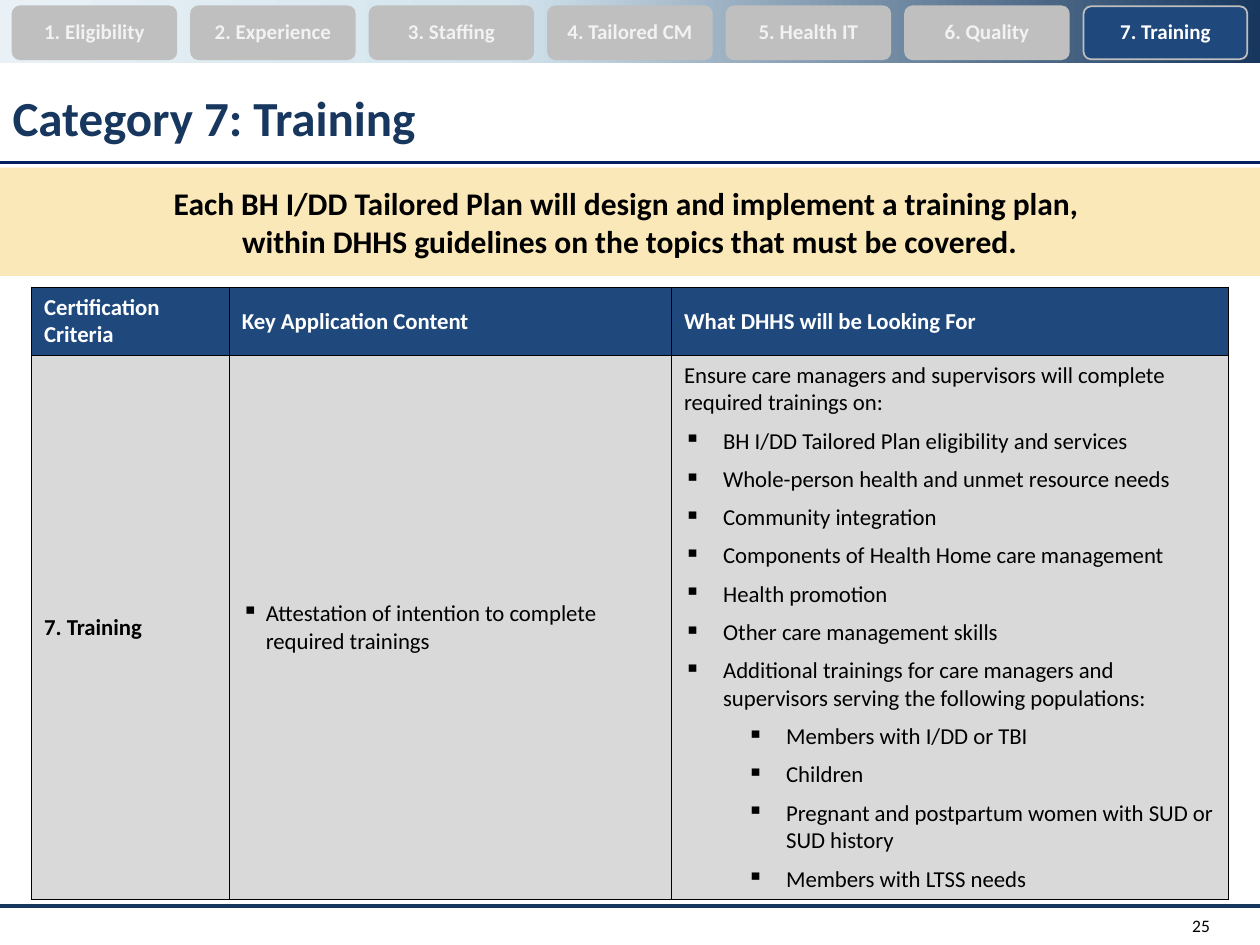
"""Build the training category slide with its tab bar, banner and criteria table."""
from copy import deepcopy
from lxml import etree
from pptx import Presentation
from pptx.dml.color import RGBColor
from pptx.enum import shapes, text
from pptx.oxml.ns import qn
from pptx.util import Inches, Pt


def rgb(code):
    return RGBColor.from_string(code)


def style(para, size, color, bold=False):
    for run in para.runs:
        run.font.name = "Calibri"
        run.font.size = Pt(size)
        run.font.bold = bold
        run.font.color.rgb = rgb(color)


deck = Presentation()
deck.slide_width = Inches(10)
deck.slide_height = Inches(7.5)
slide = deck.slides.add_slide(deck.slide_layouts[5])
items = slide.shapes

bar = items.add_shape(shapes.MSO_SHAPE.RECTANGLE, 0, 0, Inches(10), Inches(0.5))
bar.shadow.inherit = False
bar.line.fill.background()
bar.fill.gradient()
bar.fill.gradient_angle = 180
first = bar.fill._fill._gradFill.gsLst[0]
first.addnext(deepcopy(first))
stops = [(0, "17375E"), (0.6, "D3E4ED"), (1, "E9F1F6")]
for stop, (place, color) in zip(bar.fill.gradient_stops, stops):
    stop.position = place
    stop.color.rgb = rgb(color)

for top, color, width in [(7.19, "17375E", 2.25), (1.29, "002060", 2)]:
    rule = items.add_connector(shapes.MSO_CONNECTOR.STRAIGHT, 0, Inches(top), Inches(10), Inches(top))
    rule.line.color.rgb = rgb(color)
    rule.line.width = Pt(width)
    etree.SubElement(rule._element.spPr, qn("a:effectLst"))

title = items.title
title.left, title.top, title.width, title.height = [Inches(n) for n in (0, 0.67, 9.7, 0.58)]
title.text_frame.text = "Category 7: Training"
title.text_frame.vertical_anchor = text.MSO_ANCHOR.MIDDLE
head = title.text_frame.paragraphs[0]
head.alignment = text.PP_ALIGN.LEFT
head.line_spacing = 0.9
style(head, 28, "17375E", True)

page = items.add_textbox(Inches(9.08), Inches(7.19), Inches(0.62), Inches(0.31)).text_frame
page.word_wrap = True
page.vertical_anchor = text.MSO_ANCHOR.MIDDLE
page.text = "25"
page.paragraphs[0].alignment = text.PP_ALIGN.RIGHT
style(page.paragraphs[0], 10, "000000")

grid = items.add_table(2, 3, Inches(0.25), Inches(2.28), Inches(9.5), Inches(4.86)).table
for col, width in zip(grid.columns, (1.57, 3.51, 4.42)):
    col.width = Inches(width)
for row, height in zip(grid.rows, (0.54, 4.32)):
    row.height = Inches(height)

heads = ["Certification Criteria", "Key Application Content", "What DHHS will be Looking For"]
topics = [
    "BH I/DD Tailored Plan eligibility and services",
    "Whole-person health and unmet resource needs",
    "Community integration",
    "Components of Health Home care management",
    "Health promotion",
    "Other care management skills",
    "Additional trainings for care managers and supervisors serving the following populations:",
]
groups = [
    "Members with I/DD or TBI",
    "Children",
    "Pregnant and postpartum women with SUD or SUD history",
    "Members with LTSS needs",
]
looks = [("Ensure care managers and supervisors will complete required trainings on:", 0, 0, 0)]
looks += [(topic, 0, 0.31, 0.31) for topic in topics]
looks += [(group, 1, 0.81, 0.31) for group in groups]
body = [
    [("7. Training", 0, 0, 0)],
    [("Attestation of intention to complete required trainings", 0, 0.19, 0.19)],
    looks,
]
rows = [[[(name, 0, 0, 0)] for name in heads], body]

for r, row in enumerate(rows):
    for c, lines in enumerate(row):
        cell = grid.cell(r, c)
        cell.vertical_anchor = text.MSO_ANCHOR.MIDDLE
        props = cell._tc.get_or_add_tcPr()
        for side in ("lnL", "lnR", "lnT", "lnB"):
            edge = etree.SubElement(props, qn("a:" + side), w=str(Pt(1)))
            paint = etree.SubElement(edge, qn("a:solidFill"))
            etree.SubElement(paint, qn("a:srgbClr"), val="000000")
        cell.fill.solid()
        cell.fill.fore_color.rgb = rgb("D9D9D9" if r else "1F497D")
        frame = cell.text_frame
        frame.text = "\n".join(line[0] for line in lines)
        for para, (_, level, left, hang) in zip(frame.paragraphs, lines):
            para.level = level
            if hang:
                form = para._p.get_or_add_pPr()
                form.set("marL", str(Inches(left)))
                form.set("indent", str(-Inches(hang)))
                etree.SubElement(form, qn("a:buChar"), char="▪")
            if r and c != 1:
                para.space_after = Pt(6)
            style(para, 13, "000000" if r else "FFFFFF", r == 0 or c == 0)

tabs = ["Eligibility", "Experience", "Staffing", "Tailored CM", "Health IT", "Quality", "Training"]
gap = (8.6 - 0.1) / (len(tabs) - 1)
for i, name in enumerate(tabs):
    live = name == "Training"
    tab = items.add_shape(shapes.MSO_SHAPE.ROUNDED_RECTANGLE, Inches(0.1 + i * gap), Inches(0.05), Inches(1.3), Inches(0.42))
    tab.adjustments[0] = 0.14
    tab.shadow.inherit = False
    tab.fill.solid()
    tab.fill.fore_color.rgb = rgb("1F497D" if live else "BFBFBF")
    tab.line.color.rgb = rgb("BFBFBF")
    tab.line.width = Pt(1)
    frame = tab.text_frame
    frame.margin_left = frame.margin_right = frame.margin_top = frame.margin_bottom = Inches(0.07)
    frame.vertical_anchor = text.MSO_ANCHOR.MIDDLE
    frame.text = f"{i + 1}. {name}"
    label = frame.paragraphs[0]
    label.alignment = text.PP_ALIGN.CENTER
    label.line_spacing = 0.9
    style(label, 12, "FFFFFF" if live else "F2F2F2", True)

band = items.add_shape(shapes.MSO_SHAPE.RECTANGLE, 0, Inches(1.33), Inches(10), Inches(0.86))
band.shadow.inherit = False
band.fill.solid()
band.fill.fore_color.rgb = rgb("FAE8B8")
band.line.fill.background()
frame = band.text_frame
frame.margin_left = frame.margin_right = Inches(0.3)
frame.margin_top = frame.margin_bottom = Inches(0.06)
frame.vertical_anchor = text.MSO_ANCHOR.MIDDLE
frame.text = (
    "Each BH I/DD Tailored Plan will design and implement a training plan, \n"
    "within DHHS guidelines on the topics that must be covered."
)
for para in frame.paragraphs:
    para.alignment = text.PP_ALIGN.CENTER
    style(para, 18, "000000", True)

deck.save("out.pptx")
